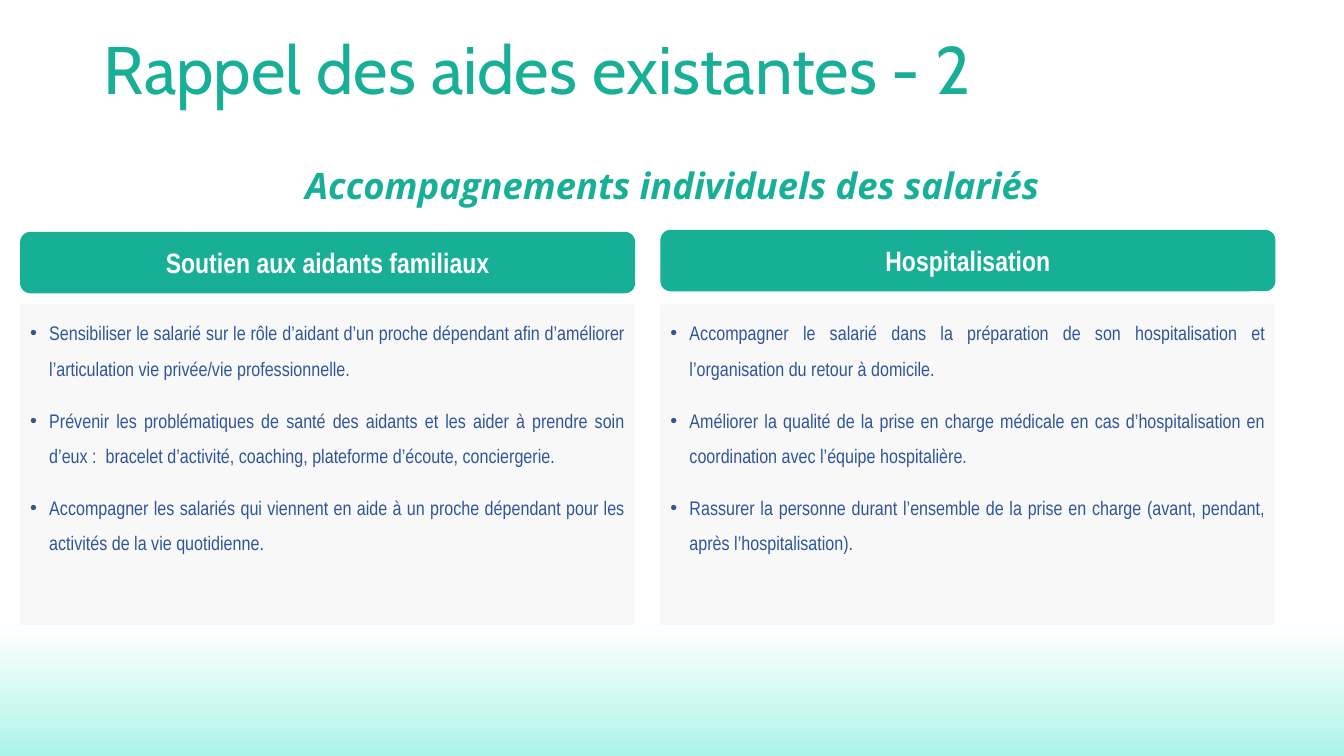
from dataclasses import dataclass

from lxml.etree import SubElement
from pptx import Presentation
from pptx.dml.color import RGBColor
from pptx.enum.shapes import MSO_SHAPE as Shape
from pptx.enum.text import MSO_ANCHOR as Anchor, MSO_AUTO_SIZE as AutoSize, PP_ALIGN as Align
from pptx.oxml.ns import qn
from pptx.util import Inches, Pt

TEAL = RGBColor(0x17, 0xAF, 0x95)
MINT = RGBColor(0xAC, 0xF4, 0xE8)
BLUE = RGBColor(0x2F, 0x55, 0x97)
PALE = RGBColor(0xF8, 0xF8, 0xF8)
WHITE = RGBColor(0xFF, 0xFF, 0xFF)

COLUMN_W = 6.1
HEADER_H = 0.61
PANEL_TOP, PANEL_H = 3.02, 3.18
INDENT = Inches(0.19)


@dataclass
class Column:
    left: float
    header_top: float
    heading: str
    items: list[str]


COLUMNS = [
    Column(0.2, 2.3, "Soutien aux aidants familiaux", [
        "Sensibiliser le salarié sur le rôle d’aidant d’un proche dépendant afin "
        "d’améliorer l’articulation vie privée/vie professionnelle.",
        "Prévenir les problématiques de santé des aidants et les aider à prendre soin "
        "d’eux :  bracelet d’activité, coaching, plateforme d’écoute, conciergerie.",
        "Accompagner les salariés qui viennent en aide à un proche dépendant pour les "
        "activités de la vie quotidienne.",
    ]),
    Column(6.55, 2.28, "Hospitalisation", [
        "Accompagner le salarié dans la préparation de son hospitalisation et "
        "l’organisation du retour à domicile.",
        "Améliorer la qualité de la prise en charge médicale en cas d’hospitalisation en "
        "coordination avec l’équipe hospitalière.",
        "Rassurer la personne durant l’ensemble de la prise en charge (avant, pendant, "
        "après l’hospitalisation).",
    ]),
]


def place(sp, left: float, top: float, width: float, height: float) -> None:
    sp.left, sp.top = Inches(left), Inches(top)
    sp.width, sp.height = Inches(width), Inches(height)


def set_bullet(p, color: RGBColor | None) -> None:
    pPr = p._p.get_or_add_pPr()
    indent = INDENT if color else 0
    pPr.set("marL", str(indent))
    pPr.set("indent", str(-indent))
    if color is None:
        SubElement(pPr, qn("a:buNone"))
        return
    SubElement(SubElement(pPr, qn("a:buClr")), qn("a:srgbClr")).set("val", str(color))
    SubElement(pPr, qn("a:buFont")).set("typeface", "Arial")
    SubElement(pPr, qn("a:buChar")).set("char", "•")


def write(sp, texts: list[str], *, font: str, size: int, color: RGBColor,
          bold: bool = False, italic: bool = False, align=Align.CENTER,
          anchor=Anchor.TOP, spacing: float = 1.0, gap: int = 0,
          after: int = 0, bullet: RGBColor | None = None) -> None:
    tf = sp.text_frame
    tf.word_wrap = True
    tf.auto_size = AutoSize.NONE
    tf.vertical_anchor = anchor
    for i, text in enumerate(texts):
        p = tf.paragraphs[0] if i == 0 else tf.add_paragraph()
        set_bullet(p, bullet)
        p.alignment = align
        p.line_spacing = spacing
        p.space_before = Pt(gap if i else 0)
        p.space_after = Pt(after)
        r = p.add_run()
        r.text = text
        r.font.name, r.font.size = font, Pt(size)
        r.font.bold, r.font.italic = bold, italic
        r.font.color.rgb = color


def add_box(slide, kind, left: float, top: float, height: float, fill: RGBColor):
    sp = slide.shapes.add_shape(kind, Inches(left), Inches(top),
                                Inches(COLUMN_W), Inches(height))
    sp.shadow.inherit = False
    sp.fill.solid()
    sp.fill.fore_color.rgb = fill
    sp.line.fill.background()
    return sp


def draw_column(slide, col: Column) -> None:
    header = add_box(slide, Shape.ROUNDED_RECTANGLE, col.left, col.header_top, HEADER_H, TEAL)
    write(header, [col.heading], font="Arial Narrow", size=20, color=WHITE,
          bold=True, anchor=Anchor.MIDDLE)
    panel = add_box(slide, Shape.RECTANGLE, col.left, PANEL_TOP, PANEL_H, PALE)
    write(panel, col.items, font="Arial Narrow", size=14, color=BLUE,
          align=Align.JUSTIFY, spacing=1.5, gap=6, after=6, bullet=BLUE)


def set_background(slide) -> None:
    fill = slide.background.fill
    fill.gradient()
    fill.gradient_angle = 270
    for stop, color, position in zip(fill.gradient_stops, (WHITE, MINT), (0.83, 1)):
        stop.color.rgb = color
        stop.position = position


def main() -> None:
    prs = Presentation()
    prs.slide_width, prs.slide_height = Inches(13.33), Inches(7.5)
    slide = prs.slides.add_slide(prs.slide_layouts[1])
    set_background(slide)

    title, body = slide.placeholders
    place(title, 0.93, 0.06, 11.5, 1.32)
    write(title, ["Rappel des aides existantes - 2"], font="Cabin", size=48, color=TEAL,
          align=Align.LEFT, anchor=Anchor.MIDDLE, spacing=0.9)
    place(body, 0.49, 1.54, 12.45, 0.61)
    body.text_frame.margin_left = 0
    body.text_frame.margin_right = Inches(0.08)
    write(body, ["Accompagnements individuels des salariés"], font="Open Sans", size=26,
          color=TEAL, bold=True, italic=True, spacing=1.07, after=6)

    for col in COLUMNS:
        draw_column(slide, col)
    prs.save("out.pptx")


if __name__ == "__main__":
    main()
